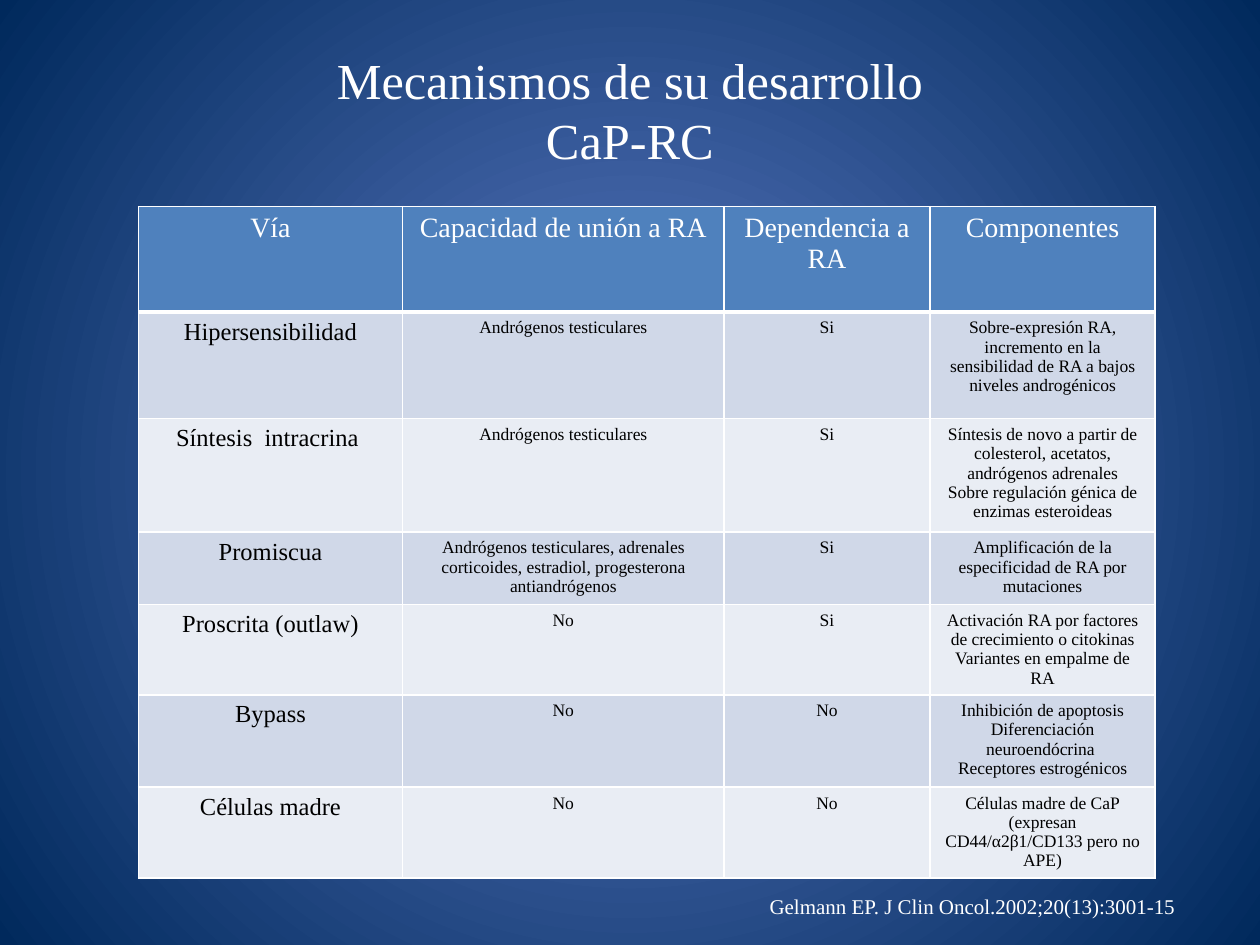
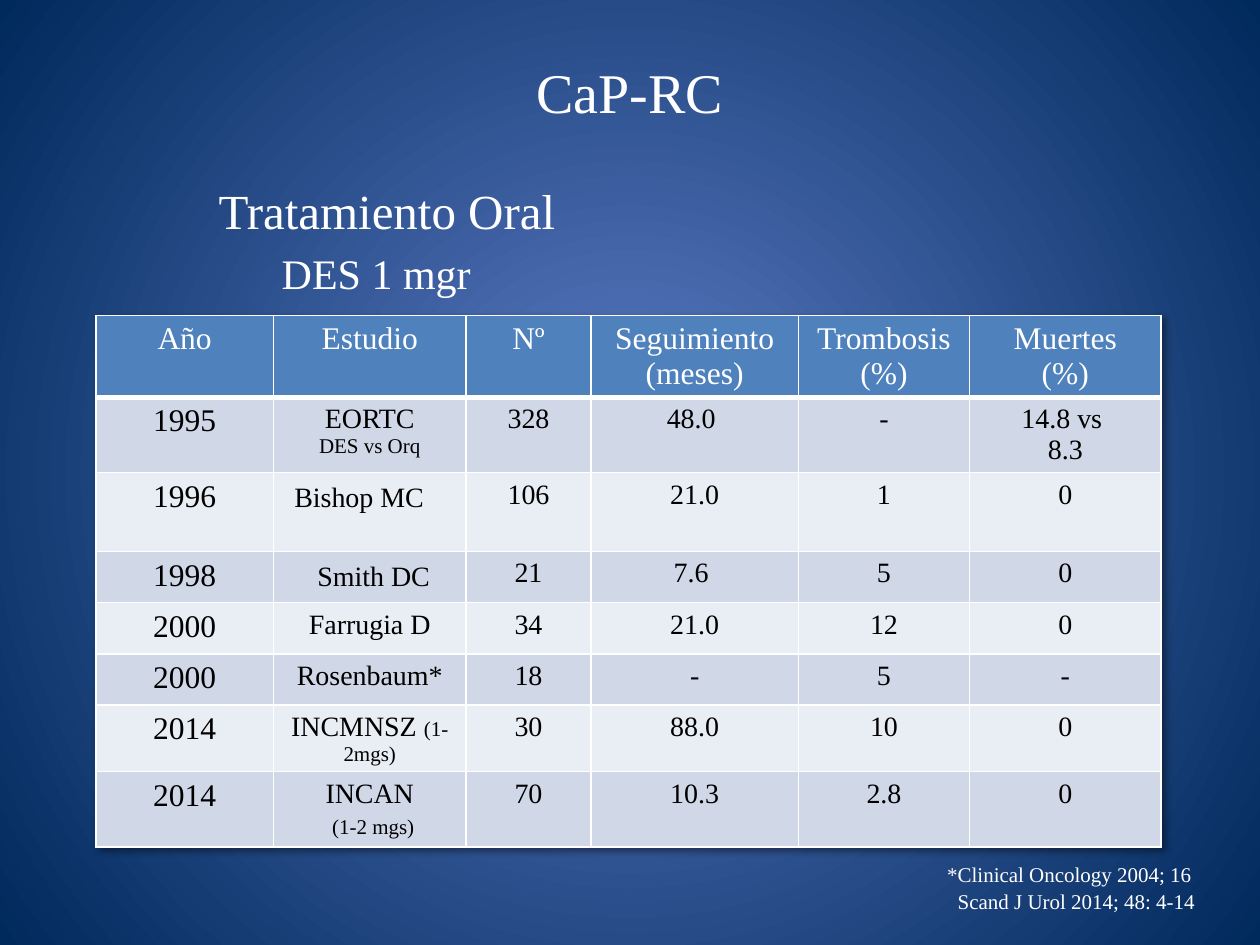
from dataclasses import dataclass

import pptx
import pptx.dml.color
import pptx.enum.text
import pptx.oxml
import pptx.oxml.ns
import pptx.util
from lxml import etree

Pt = pptx.util.Pt
qn = pptx.oxml.ns.qn
ALIGN = pptx.enum.text.PP_ALIGN
ANCHOR = pptx.enum.text.MSO_ANCHOR

FONT = "Times New Roman"
TITLE_ONLY = 5
COLORS = {
    "glow": "5E7CC5",
    "edge": "00295C",
    "light": "FFFFFF",
    "dark": "000000",
    "header": "4F81BD",
    "band_odd": "D0D8E8",
    "band_even": "E9EDF4",
}


@dataclass(frozen=True)
class Box:
    left: float
    top: float
    width: float
    height: float

    def lengths(self) -> tuple:
        return Pt(self.left), Pt(self.top), Pt(self.width), Pt(self.height)


@dataclass(frozen=True)
class Run:
    text: str
    size: float


@dataclass(frozen=True)
class Line:
    text: str
    size: float
    indent: float = 0
    before: float = 0


@dataclass(frozen=True)
class Grid:
    left: float
    top: float
    widths: tuple
    heights: tuple
    header_size: float
    first_size: float
    body_size: float
    rows: tuple

    def size_at(self, row: int, col: int) -> float:
        if row == 0:
            return self.header_size
        return self.first_size if col == 0 else self.body_size


MECHANISMS = Grid(
    79.2, 118, (150.8, 183.8, 117.6, 128.8),
    (60.4, 60.9, 64.8, 41.4, 51.6, 52.8, 51.8), 16, 14, 10,
    (
        ("Vía", "Capacidad de unión a RA", "Dependencia a RA", "Componentes"),
        ("Hipersensibilidad", "Andrógenos testiculares", "Si",
         "Sobre-expresión RA, incremento en la sensibilidad de RA a bajos niveles androgénicos"),
        ("Síntesis  intracrina ", "Andrógenos testiculares", "Si",
         "Síntesis de novo a partir de colesterol, acetatos, andrógenos adrenales\n"
         "Sobre regulación génica de enzimas esteroideas"),
        ("Promiscua",
         "Andrógenos testiculares, adrenales corticoides, estradiol, progesterona antiandrógenos",
         "Si", "Amplificación de la especificidad de RA por mutaciones"),
        ("Proscrita (outlaw)", "No", "Si",
         "Activación RA por factores de crecimiento o citokinas\nVariantes en empalme de RA"),
        ("Bypass", "No", "No",
         "Inhibición de apoptosis\nDiferenciación neuroendócrina \nReceptores estrogénicos"),
        ("Células madre", "No", "No",
         "Células madre de CaP\n(expresan CD44/α2β1/CD133 pero no APE)"),
    ),
)

STUDIES = Grid(
    54.8, 180.2, (101.4, 110.2, 71.3, 118.6, 97.8, 109.4),
    (46.6, 43.1, 45.1, 29.2, 29.2, 29.2, 38.2, 43.1), 18, 18, 16,
    (
        ("Año", "Estudio", "Nº", "Seguimiento\n(meses)", "Trombosis\n(%)", "Muertes\n(%)"),
        ("1995", ((Run("EORTC", 16),), (Run("DES vs Orq", 12),)),
         "328", "48.0 ", "-", "14.8 vs \n8.3"),
        ("1996", ((Run(" ", 18), Run("Bishop MC", 16)),), "106", "21.0", "1", "0"),
        ("1998", ((Run(" ", 18), Run("Smith DC", 16)),), "21", "7.6 ", "5", "0"),
        ("2000", "Farrugia D", "34", "21.0", "12", "0"),
        ("2000", "Rosenbaum*", "18", "-", "5", "-"),
        ("2014", ((Run("INCMNSZ ", 16), Run("(1-2mgs)", 12)),), "30", "88.0", "10", "0"),
        ("2014", ((Run("INCAN", 16),), (Run(" ", 16), Run("(1-2 mgs)", 12))),
         "70", "10.3", "2.8", "0"),
    ),
)


def rgb(name: str) -> pptx.dml.color.RGBColor:
    return pptx.dml.color.RGBColor.from_string(COLORS[name])


def style_run(r, size: float, color: str) -> None:
    r.font.name = FONT
    r.font.size = Pt(size)
    r.font.color.rgb = rgb(color)


def paint_background(master) -> None:
    fill = master.background.fill
    fill.gradient()
    for stop, name, position in zip(fill.gradient_stops, ("glow", "edge"), (0, 1)):
        stop.color.rgb = rgb(name)
        stop.position = position
    grad = master.element.find(".//" + qn("p:bg")).find(".//" + qn("a:gradFill"))
    for lin in grad.findall(qn("a:lin")):
        grad.remove(lin)
    circle = etree.SubElement(grad, qn("a:path"), {"path": "circle"})
    etree.SubElement(circle, qn("a:fillToRect"), dict.fromkeys("ltrb", "50000"))


def add_titled_slide(prs, title: str, box: Box, size: float):
    slide = prs.slides.add_slide(prs.slide_layouts[TITLE_ONLY])
    sp = slide.shapes.title
    sp.left, sp.top, sp.width, sp.height = box.lengths()
    tf = sp.text_frame
    tf.text = title
    tf.vertical_anchor = ANCHOR.MIDDLE
    for p in tf.paragraphs:
        p.alignment = ALIGN.CENTER
        for r in p.runs:
            style_run(r, size, "light")
    return slide


def add_lines(slide, box: Box, lines: tuple, wrap: bool = False) -> None:
    tf = slide.shapes.add_textbox(*box.lengths()).text_frame
    tf.word_wrap = wrap
    tf.text = "\n".join(line.text for line in lines)
    for p, line in zip(tf.paragraphs, lines):
        p.alignment = ALIGN.LEFT
        p.space_before = Pt(line.before)
        p._p.get_or_add_pPr().set("marL", str(Pt(line.indent)))
        style_run(p.runs[0], line.size, "light")


def set_borders(cell, row: int) -> None:
    tc_pr = cell._tc.get_or_add_tcPr()
    thick_side = {0: "B", 1: "T"}.get(row)
    for side in "LRTB":
        width = Pt(3 if side == thick_side else 1)
        ln = etree.SubElement(tc_pr, qn(f"a:ln{side}"), {"w": str(width)})
        solid = etree.SubElement(ln, qn("a:solidFill"))
        etree.SubElement(solid, qn("a:srgbClr"), {"val": COLORS["light"]})


def write_cell(cell, content, size: float, color: str) -> None:
    tf = cell.text_frame
    if isinstance(content, str):
        content = tuple((Run(text, size),) for text in content.split("\n"))
    for index, runs in enumerate(content):
        p = tf.add_paragraph() if index else tf.paragraphs[0]
        p.alignment = ALIGN.CENTER
        for run in runs:
            r = p.add_run()
            r.text = run.text
            style_run(r, run.size, color)


def add_grid(slide, grid: Grid):
    box = Box(grid.left, grid.top, sum(grid.widths), sum(grid.heights))
    table = slide.shapes.add_table(len(grid.heights), len(grid.widths), *box.lengths()).table
    table.horz_banding = False
    table.first_row = False
    for column, width in zip(table.columns, grid.widths):
        column.width = Pt(width)
    for row, height in zip(table.rows, grid.heights):
        row.height = Pt(height)
    for i, contents in enumerate(grid.rows):
        fill = "header" if i == 0 else "band_odd" if i % 2 else "band_even"
        for j, content in enumerate(contents):
            cell = table.cell(i, j)
            set_borders(cell, i)
            cell.margin_bottom = Pt(0)
            cell.fill.solid()
            cell.fill.fore_color.rgb = rgb(fill)
            write_cell(cell, content, grid.size_at(i, j), "dark" if i else "light")
    return table


def add_table_shadow(table) -> None:
    effects = etree.Element(qn("a:effectLst"))
    shadow = etree.SubElement(effects, qn("a:outerShdw"), {
        "blurRad": str(Pt(4)), "dist": str(Pt(3)), "dir": "2700000",
        "algn": "tl", "rotWithShape": "0"})
    color = etree.SubElement(shadow, qn("a:srgbClr"), {"val": COLORS["dark"]})
    etree.SubElement(color, qn("a:alpha"), {"val": "40000"})
    table._tbl.tblPr.insert(0, effects)


def build_mechanisms(prs) -> None:
    slide = add_titled_slide(prs, "Mecanismos de su desarrollo\vCaP-RC",
                             Box(36, 27.4, 648, 70), 28.8)
    add_grid(slide, MECHANISMS)
    add_lines(slide, Box(432.7, 506.9, 254.9, 21.8),
              (Line("Gelmann EP. J Clin Oncol.2002;20(13):3001-15", 12),))


def build_oral_treatment(prs) -> None:
    slide = add_titled_slide(prs, "CaP-RC", Box(36, 7.2, 648, 90), 32)
    add_lines(slide, Box(54.7, 99.4, 648, 78),
              (Line("Tratamiento Oral", 28, 63.2, 4), Line("DES 1 mgr", 24, 99.2, 4.8)), True)
    table = add_grid(slide, STUDIES)
    bishop = table.cell(2, 1)
    bishop.margin_left, bishop.margin_right = Pt(0), Pt(16.6)
    add_table_shadow(table)
    add_lines(slide, Box(534.2, 489, 157.7, 36),
              (Line("*Clinical Oncology 2004; 16", 12, 0, 1),
               Line("Scand J Urol 2014; 48: 4-14", 12, 6, 1)))


def main() -> None:
    prs = pptx.Presentation()
    prs.slide_width, prs.slide_height = Pt(720), Pt(540)
    paint_background(prs.slide_master)
    build_mechanisms(prs)
    build_oral_treatment(prs)
    prs.save("out.pptx")


if __name__ == "__main__":
    main()
